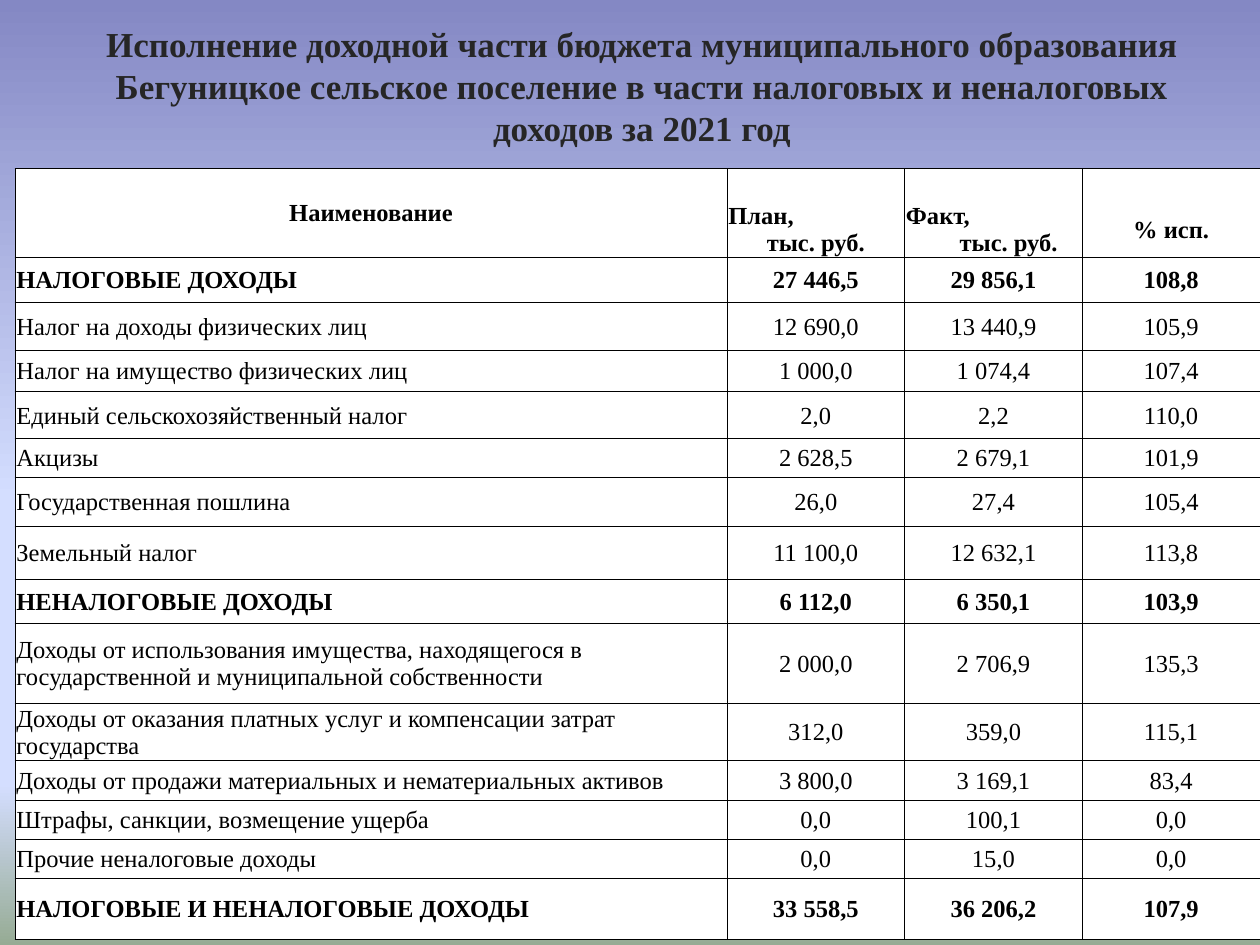
from dataclasses import dataclass
import lxml.etree
import pptx
import pptx.dml.color
import pptx.enum.text
import pptx.oxml.ns
import pptx.util

Inches = pptx.util.Inches
Pt = pptx.util.Pt
qn = pptx.oxml.ns.qn
Align = pptx.enum.text.PP_ALIGN
Anchor = pptx.enum.text.MSO_ANCHOR


@dataclass(frozen=True)
class Theme:
    font: str = "Times New Roman"
    title_size: int = 20
    table_size: int = 14
    title_color: str = "262626"
    text_color: str = "000000"
    cell_fill: str = "FFFFFF"
    border_color: str = "000000"
    border_width: float = 0.5
    backdrop: tuple = ((0, "8488C4"), (53, "D4DEFF"), (83, "D4DEFF"), (100, "96AB94"))


@dataclass(frozen=True)
class Income:
    name: str
    plan: str
    fact: str
    percent: str
    height: float
    bold: bool = False


@dataclass(frozen=True)
class Line:
    text: str
    align: Align = Align.CENTER
    indent: float = 0


THEME = Theme()
TITLE = (
    "Исполнение доходной части бюджета муниципального образования "
    "Бегуницкое сельское поселение в части налоговых и неналоговых доходов за 2021 год"
)
COLUMN_WIDTHS = (5.65, 1.41, 1.41, 1.41)
HEADER_HEIGHTS = (0.26, 0.37)
HEADERS = (
    (Line("План,", Align.LEFT), Line("тыс. руб.")),
    (Line("Факт,", Align.LEFT), Line("тыс. руб.", indent=0.24)),
    (Line("% исп."),),
)
INCOMES = (
    Income("НАЛОГОВЫЕ ДОХОДЫ", "27 446,5", "29 856,1", "108,8", 0.36, True),
    Income("Налог на доходы физических лиц", "12 690,0", "13 440,9", "105,9", 0.38),
    Income("Налог на имущество физических лиц", "1 000,0", "1 074,4", "107,4", 0.33),
    Income("Единый сельскохозяйственный налог", "2,0", "2,2", "110,0", 0.37),
    Income("Акцизы", "2 628,5", "2 679,1", "101,9", 0.31),
    Income("Государственная пошлина", "26,0", "27,4", "105,4", 0.39),
    Income("Земельный налог", "11 100,0", "12 632,1", "113,8", 0.42),
    Income("НЕНАЛОГОВЫЕ ДОХОДЫ", "6 112,0", "6 350,1", "103,9", 0.35, True),
    Income("Доходы от использования имущества, находящегося в государственной и муниципальной собственности",
           "2 000,0", "2 706,9", "135,3", 0.63),
    Income("Доходы от оказания платных услуг и компенсации затрат государства",
           "312,0", "359,0", "115,1", 0.46),
    Income("Доходы от продажи материальных и нематериальных активов",
           "3 800,0", "3 169,1", "83,4", 0.31),
    Income("Штрафы, санкции, возмещение ущерба", "0,0", "100,1", "0,0", 0.31),
    Income("Прочие неналоговые доходы", "0,0", "15,0", "0,0", 0.31),
    Income("НАЛОГОВЫЕ И НЕНАЛОГОВЫЕ ДОХОДЫ", "33 558,5", "36 206,2", "107,9", 0.49, True),
)


def rgb(color: str) -> pptx.dml.color.RGBColor:
    return pptx.dml.color.RGBColor.from_string(color)


def add_span(para, text: str, size: int, color: str, bold: bool) -> None:
    span = para.add_run()
    span.text = text
    span.font.name = THEME.font
    span.font.size = Pt(size)
    span.font.bold = bold
    span.font.color.rgb = rgb(color)


def paint_background(page) -> None:
    fill = page.background.fill
    fill.gradient()
    fill.gradient_angle = 270
    stops = page.element.find(".//" + qn("a:gsLst"))
    for stop in list(stops):
        stops.remove(stop)
    for percent, color in THEME.backdrop:
        stop = lxml.etree.SubElement(stops, qn("a:gs"), pos=str(percent * 1000))
        lxml.etree.SubElement(stop, qn("a:srgbClr"), val=color)


def write_title(page) -> None:
    box = page.shapes.title
    box.left, box.top, box.width, box.height = map(Inches, (0.43, 0.16, 9.33, 1.07))
    frame = box.text_frame
    frame.word_wrap = True
    frame.vertical_anchor = Anchor.BOTTOM
    para = frame.paragraphs[0]
    para.alignment = Align.CENTER
    add_span(para, TITLE, THEME.title_size, THEME.title_color, True)


def style_cell(cell, sides: str) -> None:
    cell.margin_left = cell.margin_right = cell.margin_top = Inches(0.01)
    cell.margin_bottom = 0
    cell.vertical_anchor = Anchor.MIDDLE
    properties = cell._tc.get_or_add_tcPr()
    for side in "LRTB":
        width = Pt(THEME.border_width) if side in sides else 0
        border = lxml.etree.SubElement(properties, qn("a:ln" + side), w=str(width))
        if side in sides:
            paint = lxml.etree.SubElement(border, qn("a:solidFill"))
            lxml.etree.SubElement(paint, qn("a:srgbClr"), val=THEME.border_color)
        else:
            lxml.etree.SubElement(border, qn("a:noFill"))
    cell.fill.solid()
    cell.fill.fore_color.rgb = rgb(THEME.cell_fill)


def write_cell(cell, lines: tuple[Line, ...], bold: bool) -> None:
    frame = cell.text_frame
    for index, line in enumerate(lines):
        para = frame.add_paragraph() if index else frame.paragraphs[0]
        para.alignment = line.align
        if line.indent:
            para._p.get_or_add_pPr().set("marL", str(Inches(line.indent)))
        add_span(para, line.text, THEME.table_size, THEME.text_color, bold)


def add_income_table(page) -> None:
    heights = HEADER_HEIGHTS + tuple(income.height for income in INCOMES)
    table = page.shapes.add_table(
        len(heights), len(COLUMN_WIDTHS), Inches(0.12), Inches(1.34),
        Inches(sum(COLUMN_WIDTHS)), Inches(sum(heights)),
    ).table
    table.first_row = table.horz_banding = False
    for column, width in zip(table.columns, COLUMN_WIDTHS):
        column.width = Inches(width)
    for row, height in zip(table.rows, heights):
        row.height = Inches(height)

    header_sides = ("LRT", "LRB")
    for row_index, row in enumerate(table.rows):
        for column_index, cell in enumerate(row.cells):
            split = column_index > 0 and row_index < len(header_sides)
            style_cell(cell, header_sides[row_index] if split else "LRTB")

    for cell in table.rows[0].cells:
        para = cell.text_frame.paragraphs[0]
        lxml.etree.SubElement(para._p, qn("a:endParaRPr"), sz=str(THEME.table_size * 100))
    table.cell(0, 0).merge(table.cell(1, 0))
    write_cell(table.cell(0, 0), (Line("Наименование"),), True)
    for column, lines in enumerate(HEADERS, start=1):
        write_cell(table.cell(1, column), lines, True)

    for row, income in enumerate(INCOMES, start=len(HEADER_HEIGHTS)):
        write_cell(table.cell(row, 0), (Line(income.name, Align.LEFT),), income.bold)
        for column, value in enumerate((income.plan, income.fact, income.percent), start=1):
            write_cell(table.cell(row, column), (Line(value),), income.bold)


def main() -> None:
    deck = pptx.Presentation()
    deck.slide_width, deck.slide_height = Inches(10), Inches(7.5)
    page = deck.slides.add_slide(deck.slide_layouts[5])
    paint_background(page)
    write_title(page)
    add_income_table(page)
    deck.save("out.pptx")


if __name__ == "__main__":
    main()
